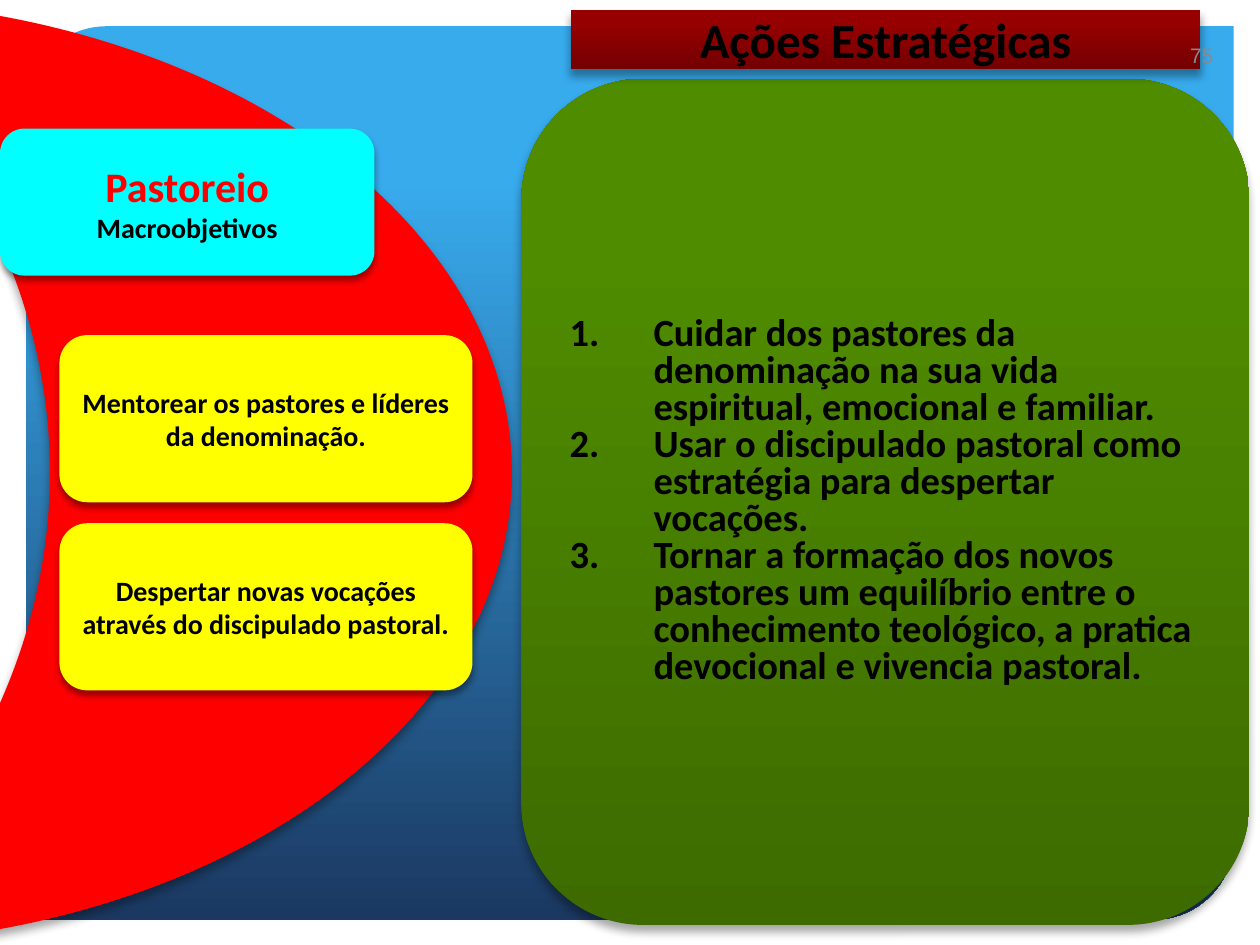
"""Builds the pastoral care slide with its macro-objectives and strategic actions."""
from dataclasses import dataclass

from lxml import etree
from pptx import Presentation
from pptx.dml.color import RGBColor
from pptx.enum import shapes, text
from pptx.oxml.ns import qn
from pptx.util import Pt


@dataclass(frozen=True)
class Theme:
    font: str = "Calibri"
    number_font: str = "Arial"
    ink: str = "000000"
    accent: str = "FF0000"
    heading: str = "00FFFF"
    goal: str = "FFFF00"
    muted: str = "898989"
    title_size: float = 28
    heading_size: float = 24
    list_size: float = 22
    goal_size: float = 16
    number_size: float = 12


@dataclass(frozen=True)
class Box:
    left: float
    top: float
    width: float
    height: float

    def lengths(self) -> tuple:
        return Pt(self.left), Pt(self.top), Pt(self.width), Pt(self.height)


@dataclass(frozen=True)
class Gradient:
    angle: float
    stops: tuple


@dataclass(frozen=True)
class Shadow:
    alpha: int
    blur: float
    distance: float


@dataclass(frozen=True)
class Line:
    words: str
    size: float
    color: str = Theme.ink
    bold: bool = True
    font: str = Theme.font
    align: text.PP_ALIGN = text.PP_ALIGN.CENTER


@dataclass(frozen=True)
class Card:
    box: Box
    color: str
    lines: tuple


THEME = Theme()
SKY = Gradient(270, ((0.17, "38ABED"), (1, "1B3861")))
GREEN = Gradient(90, ((0, "3D6B00"), (0.8, "4F8C00")))
MAROON = Gradient(90, ((0, "740001"), (0.8, "970001")))
PANEL_SHADOW = Shadow(35, 5, 4)
CARD_SHADOW = Shadow(40, 4, 3)
LIST_INDENT = 48

HEADING = Card(Box(0, 73.5, 214, 84), THEME.heading, (
    Line("Pastoreio", THEME.heading_size, THEME.accent),
    Line("Macroobjetivos", THEME.goal_size)))
GOALS = [
    Card(Box(34, 191.5 + 107.5 * row, 236, 95.5), THEME.goal, (Line(words, THEME.goal_size),))
    for row, words in enumerate((
        "Mentorear os pastores e líderes da denominação.",
        "Despertar novas vocações através do discipulado pastoral."))]
ACTIONS = (
    "Cuidar dos pastores da denominação na sua vida espiritual, emocional e familiar.",
    "Usar o discipulado pastoral como estratégia para despertar vocações.",
    "Tornar a formação dos novos pastores um equilíbrio entre o conhecimento teológico, "
    "a pratica devocional e vivencia pastoral.")


def paint(shape, fill: str | Gradient, shadow: Shadow | None = None) -> None:
    """Gives a shape its fill and shadow, without an outline."""
    if isinstance(fill, Gradient):
        shape.fill.gradient()
        shape.fill.gradient_angle = fill.angle
        for stop, (position, color) in zip(shape.fill.gradient_stops, fill.stops):
            stop.position = position
            stop.color.rgb = RGBColor.from_string(color)
    else:
        shape.fill.solid()
        shape.fill.fore_color.rgb = RGBColor.from_string(fill)
    shape.line.fill.background()
    shape.shadow.inherit = False
    if shadow:
        effects = shape.element.spPr.find(qn("a:effectLst"))
        outer = etree.SubElement(
            effects, qn("a:outerShdw"), blurRad=str(Pt(shadow.blur)),
            dist=str(Pt(shadow.distance)), dir="5400000", rotWithShape="0")
        tint = etree.SubElement(outer, qn("a:srgbClr"), val=THEME.ink)
        etree.SubElement(tint, qn("a:alpha"), val=str(shadow.alpha * 1000))


def write(shape, lines: tuple) -> None:
    """Writes one paragraph per line, centred vertically."""
    frame = shape.text_frame
    frame.word_wrap = True
    frame.auto_size = text.MSO_AUTO_SIZE.NONE
    frame.vertical_anchor = text.MSO_ANCHOR.MIDDLE
    for index, line in enumerate(lines):
        paragraph = frame.add_paragraph() if index else frame.paragraphs[0]
        paragraph.alignment = line.align
        paragraph.space_before = Pt(0)
        run = paragraph.add_run()
        run.text = line.words
        run.font.size = Pt(line.size)
        run.font.name = line.font
        run.font.bold = line.bold
        run.font.color.rgb = RGBColor.from_string(line.color)


def add_figure(slide, kind: shapes.MSO_SHAPE, box: Box, fill: str | Gradient,
               shadow: Shadow | None = None, adjustments: tuple = ()):
    """Adds a painted preset shape."""
    figure = slide.shapes.add_shape(kind, *box.lengths())
    for index, value in enumerate(adjustments):
        figure.adjustments[index] = value
    paint(figure, fill, shadow)
    return figure


def add_card(slide, card: Card) -> None:
    """Adds a rounded card with text."""
    figure = add_figure(slide, shapes.MSO_SHAPE.ROUNDED_RECTANGLE, card.box,
                        card.color, CARD_SHADOW)
    write(figure, card.lines)


def place_panel(slide, holder, box: Box, fill: Gradient, lines: tuple) -> None:
    """Turns a placeholder into a rounded panel in front of what is drawn."""
    holder.left, holder.top, holder.width, holder.height = box.lengths()
    geometry = etree.Element(qn("a:prstGeom"), prst="roundRect")
    etree.SubElement(geometry, qn("a:avLst"))
    holder.element.spPr.insert(1, geometry)
    paint(holder, fill, PANEL_SHADOW)
    write(holder, lines)
    slide.shapes.element.append(holder.element)


def number_list(holder) -> None:
    """Numbers the paragraphs with a hanging indent."""
    for paragraph in holder.text_frame.paragraphs:
        paragraph.line_spacing = 0.8
        properties = paragraph._p.get_or_add_pPr()
        properties.set("marL", str(Pt(LIST_INDENT)))
        properties.set("indent", str(-Pt(LIST_INDENT)))
        etree.SubElement(properties, qn("a:buFont"), typeface=THEME.font)
        etree.SubElement(properties, qn("a:buAutoNum"), type="arabicPeriod")


def main() -> None:
    """Builds and saves the slide."""
    deck = Presentation()
    deck.slide_width, deck.slide_height = Pt(720), Pt(540)
    slide = deck.slides.add_slide(deck.slide_layouts[1])
    title, actions = slide.shapes.title, slide.placeholders[1]

    add_figure(slide, shapes.MSO_SHAPE.ROUND_2_DIAG_RECTANGLE, Box(15, 15, 690, 510.5),
               SKY, adjustments=(0.09, 0))
    moon = add_figure(slide, shapes.MSO_SHAPE.MOON, Box(-101.5, 0, 394, 540),
                      THEME.accent, PANEL_SHADOW, (0.67,))
    moon.rotation = 180

    place_panel(slide, actions, Box(298, 45, 416, 483.5), GREEN, tuple(
        Line(words, THEME.list_size, align=text.PP_ALIGN.LEFT) for words in ACTIONS))
    number_list(actions)
    place_panel(slide, title, Box(326, 5.5, 360, 34), MAROON,
                (Line("Ações Estratégicas", THEME.title_size),))

    for card in (HEADING, *GOALS):
        add_card(slide, card)

    page_number = slide.shapes.add_textbox(*Box(661.5, 17.5, 39, 28.5).lengths())
    write(page_number, (Line("75", THEME.number_size, THEME.muted, False,
                             THEME.number_font, text.PP_ALIGN.RIGHT),))
    deck.save("out.pptx")


if __name__ == "__main__":
    main()
